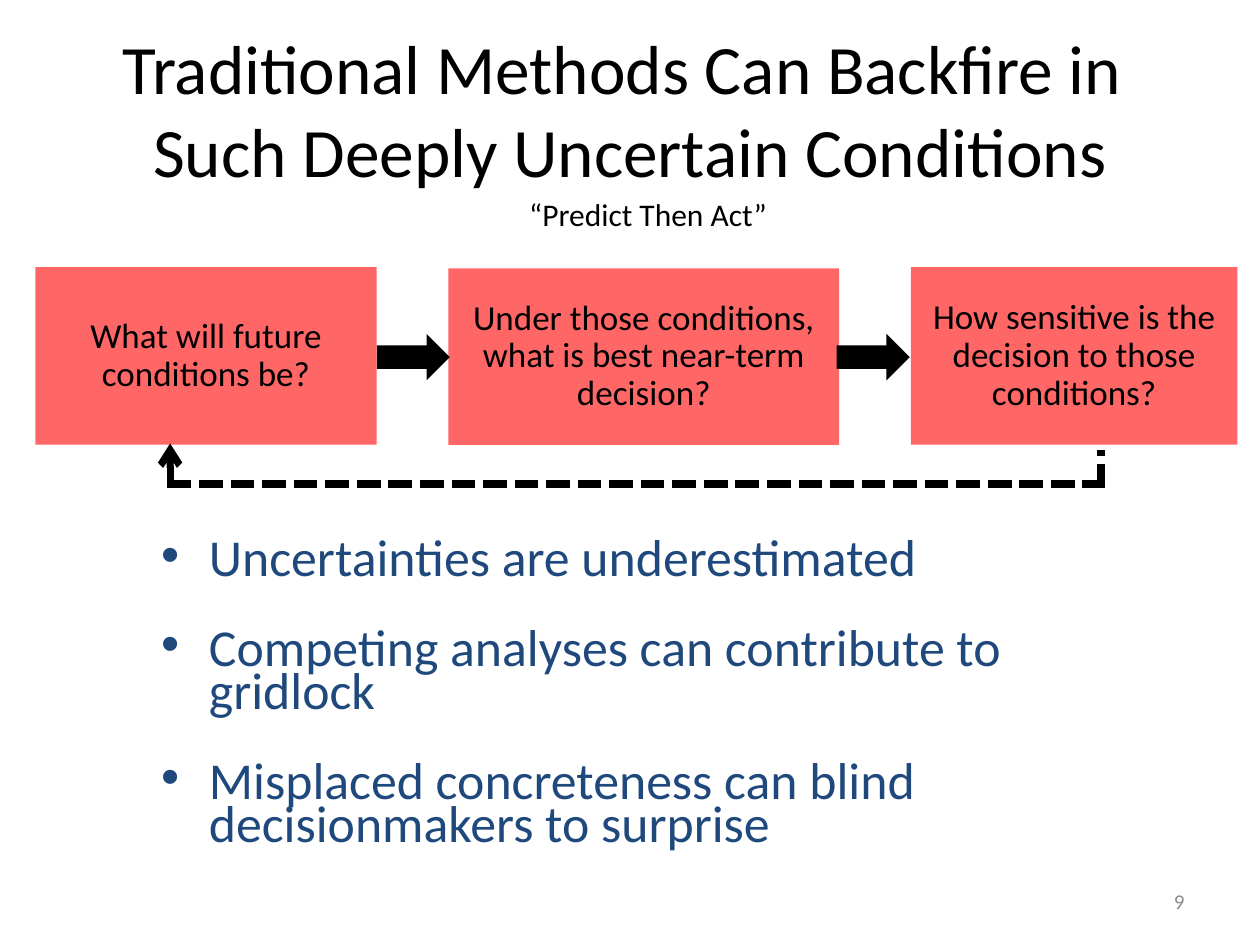
import pptx
import pptx.dml.color
import pptx.enum.dml
import pptx.enum.shapes
import pptx.enum.text
import pptx.oxml
import pptx.oxml.ns
import pptx.util

COLORS = {"ink": "000000", "step": "FF6666", "point": "1F497D", "number": "8C8C8C"}
ALIGN = pptx.enum.text.PP_ALIGN
MIDDLE = pptx.enum.text.MSO_ANCHOR.MIDDLE
SHAPE = pptx.enum.shapes.MSO_SHAPE

deck = pptx.Presentation()
deck.slide_width = pptx.util.Inches(10)
deck.slide_height = pptx.util.Inches(7.5)
slide = deck.slides.add_slide(deck.slide_layouts[5])


def area(*shares):
    """Turn percentages of the slide, x and y in turn, into lengths."""
    sides = (deck.slide_width, deck.slide_height)
    return [round(sides[i % 2] * share / 100) for i, share in enumerate(shares)]


def write(frame, *lines, size, color="ink", align=ALIGN.CENTER, anchor=MIDDLE,
          spacing=None, before=0, after=0, margin=None, bullet=False):
    frame.word_wrap = True
    frame.auto_size = pptx.enum.text.MSO_AUTO_SIZE.NONE
    frame.vertical_anchor = anchor
    if margin is not None:
        frame.margin_left = frame.margin_right = margin
        frame.margin_top = frame.margin_bottom = margin
    for i, line in enumerate(lines):
        paragraph = frame.add_paragraph() if i else frame.paragraphs[0]
        paragraph.text = line
        paragraph.alignment = align
        paragraph.line_spacing = spacing
        paragraph.space_before = pptx.util.Pt(before)
        paragraph.space_after = pptx.util.Pt(after)
        for run in paragraph.runs:
            run.font.name = "Calibri"
            run.font.size = pptx.util.Pt(size)
            run.font.color.rgb = pptx.dml.color.RGBColor.from_string(COLORS[color])
        if bullet:
            properties = paragraph._p.get_or_add_pPr()
            indent = pptx.util.Inches(0.38)
            properties.set("marL", str(indent))
            properties.set("indent", str(-indent))
            for tag, name, value in (("a:buFont", "typeface", "Arial"),
                                     ("a:buChar", "char", "•")):
                mark = pptx.oxml.ns.qn(tag)
                properties.append(properties.makeelement(mark, {name: value}))


title = slide.shapes.title
title.left, title.top, title.width, title.height = area(0, 4.4, 100, 14.13)
write(title.text_frame,
      "Traditional Methods Can Backfire in \vSuch Deeply Uncertain Conditions", size=39.6)

# Bulleted consequences
consequences = slide.shapes.add_textbox(*area(11.8, 56.67, 79.5, 36.53))
write(consequences.text_frame,
      "Uncertainties are underestimated",
      "Competing analyses can contribute to gridlock",
      "Misplaced concreteness can blind decisionmakers to surprise",
      size=29.6, color="point", align=ALIGN.LEFT, anchor=pptx.enum.text.MSO_ANCHOR.TOP,
      spacing=0.7, before=26.4, bullet=True)

# Three steps with block arrows between them
blocks = [
    (SHAPE.RECTANGLE, 2.8, 28.27, 27.1, 18.8, "step", "What will future conditions be?", 0),
    (SHAPE.RECTANGLE, 35.6, 28.4, 31, 18.67, "step",
     "Under those conditions, what is best near-term decision?", 6),
    (SHAPE.RECTANGLE, 72.3, 28.27, 25.9, 18.8, "step",
     "How sensitive is the decision to those conditions?", 6),
    (SHAPE.RIGHT_ARROW, 29.9, 35.33, 5.8, 4.93, "ink", "", 0),
    (SHAPE.RIGHT_ARROW, 66.4, 35.33, 5.8, 4.93, "ink", "", 0),
]
for kind, left, top, width, height, color, question, after in blocks:
    block = slide.shapes.add_shape(kind, *area(left, top, width, height))
    block.shadow.inherit = False
    block.fill.solid()
    block.fill.fore_color.rgb = pptx.dml.color.RGBColor.from_string(COLORS[color])
    block.line.fill.background()
    if question:
        write(block.text_frame, question, size=20, spacing=0.9, after=after)

method = slide.shapes.add_textbox(*area(31.6, 21.07, 39.7, 5.6))
write(method.text_frame, "“Predict Then Act”", size=18, spacing=0.9, margin=0,
      anchor=pptx.enum.text.MSO_ANCHOR.TOP)

# Feedback loop from the last step to the first
feedback = [
    ((13.3, 51.2, 87.4, 51.2), 4.5, True, False),
    ((87.4, 51.6, 87.4, 47.6), 4.5, True, False),
    ((13.5, 51.6, 13.5, 46.93), 4, False, True),
]
for ends, weight, dashed, arrowhead in feedback:
    link = slide.shapes.add_connector(pptx.enum.shapes.MSO_CONNECTOR.STRAIGHT, *area(*ends))
    link.line.color.rgb = pptx.dml.color.RGBColor.from_string(COLORS["ink"])
    link.line.width = pptx.util.Pt(weight)
    if dashed:
        link.line.dash_style = pptx.enum.dml.MSO_LINE.SQUARE_DOT
    if arrowhead:
        outline = link.line._get_or_add_ln()
        outline.append(outline.makeelement(pptx.oxml.ns.qn("a:tailEnd"), {"type": "arrow"}))
    link_format = link._element.spPr
    link_format.append(link_format.makeelement(pptx.oxml.ns.qn("a:effectLst"), {}))

page_number = slide.shapes.add_textbox(*area(71.7, 92.67, 23.3, 5.33))
write(page_number.text_frame, "9", size=12, color="number", align=ALIGN.RIGHT)

deck.save("out.pptx")
